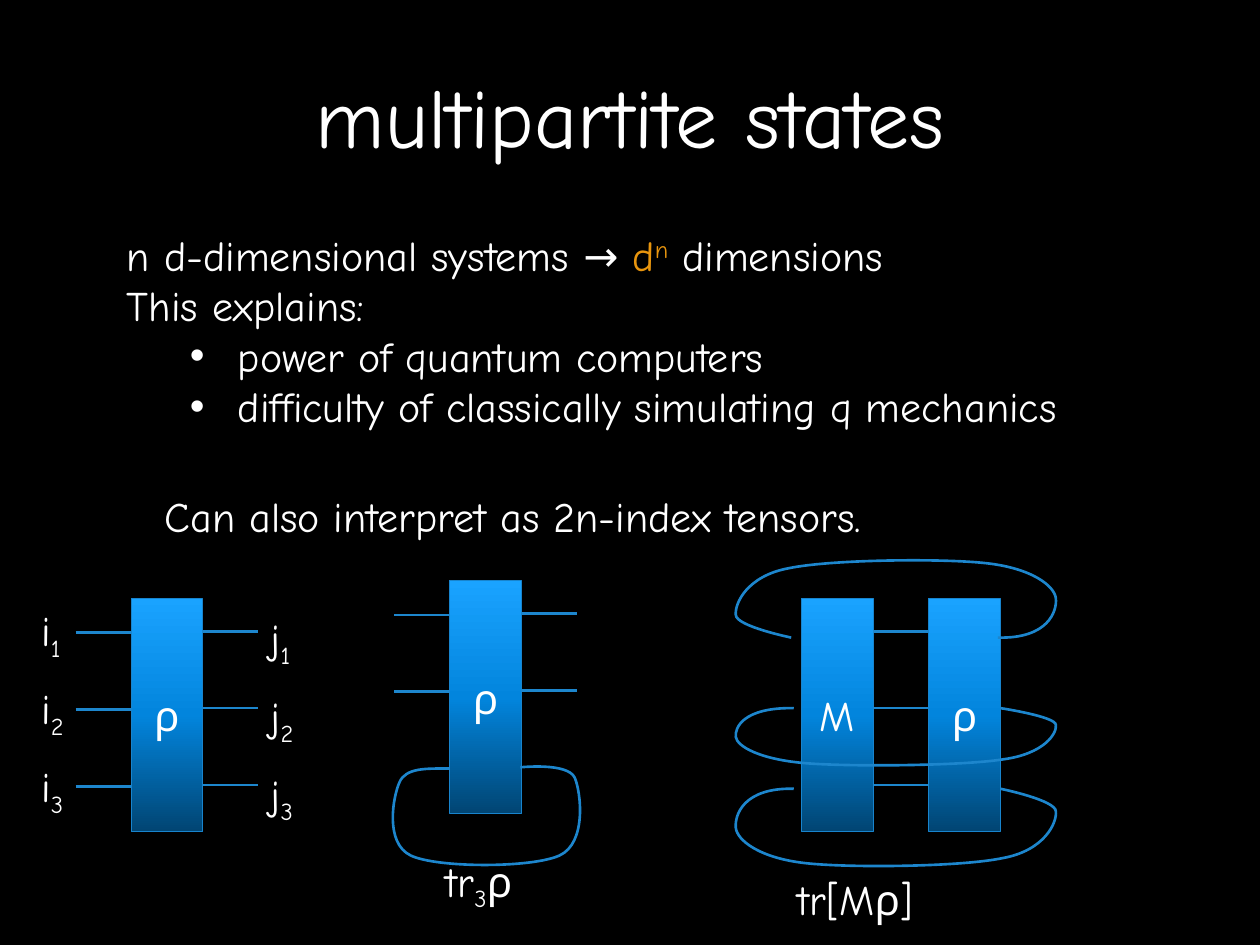
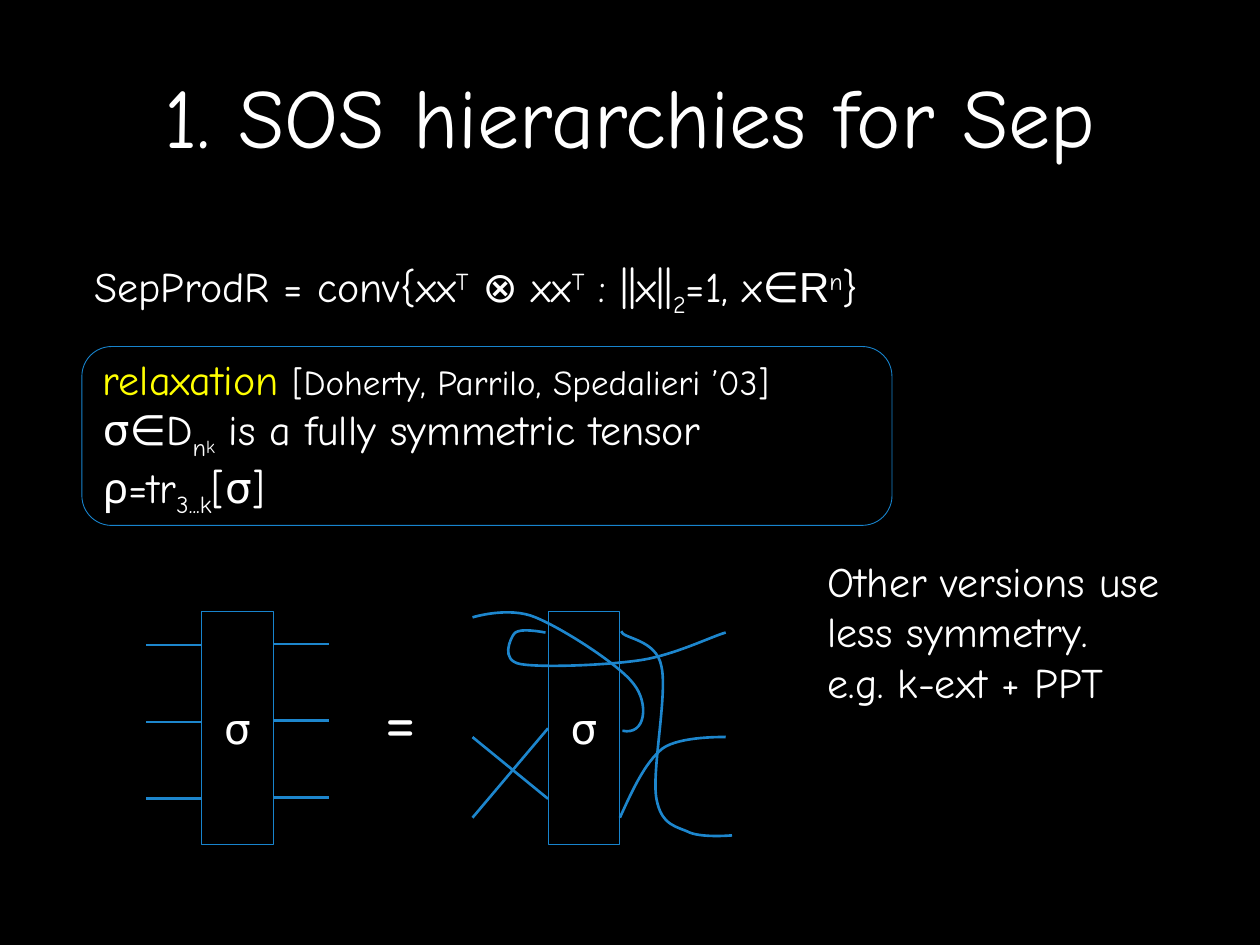
import copy
from dataclasses import dataclass

import pptx
import pptx.dml.color
import pptx.enum.shapes
import pptx.enum.text
import pptx.oxml.ns
import pptx.util
from lxml import etree
from pptx.util import Inches

ALIGN = pptx.enum.text.PP_ALIGN
ANCHOR = pptx.enum.text.MSO_ANCHOR
SHAPE = pptx.enum.shapes.MSO_SHAPE
qn = pptx.oxml.ns.qn


@dataclass(frozen=True)
class Theme:
    """Colours, fonts and type sizes of the deck."""
    background: str = "000000"
    text: str = "FFFFFF"
    accent: str = "E8950E"
    keyword: str = "FFFF00"
    outline: str = "1884CD"
    wire: str = "1D86CD"
    gradient: tuple = ((0, "014573"), (0.5, "0285DD"), (1, "1AA3FF"))
    font: str = "Comic Neue"
    plain_font: str = "Arial"
    title_size: int = 48
    equals_size: int = 40
    body_size: int = 24
    citation_size: int = 20
    nested_size: int = 18
    outline_width: float = 0.5
    wire_width: float = 1.5


THEME = Theme()
BLOCK_WIDTH, BLOCK_HEIGHT = 0.57, 1.85
WIRE_LENGTH, WIRE_STEP = 0.44, 0.61
LEFT_WIRE_DROP, RIGHT_WIRE_DROP = 0.27, 0.26


@dataclass(frozen=True)
class Span:
    """A stretch of text that departs from its paragraph's font."""
    text: str
    baseline: int = 0
    color: str = ""
    size: int = 0
    font: str = ""


def sub(text, **style):
    """Return a subscript span."""
    return Span(text, -25, **style)


def sup(text, **style):
    """Return a superscript span."""
    return Span(text, 30, **style)


def rgb(value):
    """Return a colour from its hex digits."""
    return pptx.dml.color.RGBColor.from_string(value)


def add_bullet(para):
    """Give a paragraph a hanging bullet."""
    properties = para._p.get_or_add_pPr()
    properties.set("marL", str(Inches(0.88)))
    properties.set("indent", str(Inches(-0.38)))
    etree.SubElement(properties, qn("a:buFont")).set("typeface", THEME.plain_font)
    etree.SubElement(properties, qn("a:buChar")).set("char", "•")


def add_span(para, part):
    """Append a plain string or a styled span to a paragraph."""
    part = part if isinstance(part, Span) else Span(part)
    span = para.add_run()
    span.text = part.text
    if part.color:
        span.font.color.rgb = rgb(part.color)
    if part.size:
        span.font.size = pptx.util.Pt(part.size)
    if part.font:
        span.font.name = part.font
    if part.baseline:
        span._r.get_or_add_rPr().set("baseline", str(part.baseline * 1000))


def write(frame, lines, size=THEME.body_size, align=ALIGN.LEFT, bullets=()):
    """Fill a text frame with lines, each a list of spans."""
    for index, parts in enumerate(lines):
        para = frame.add_paragraph() if index else frame.paragraphs[0]
        para.alignment = align
        if index in bullets:
            add_bullet(para)
        para.font.name = THEME.font
        para.font.size = pptx.util.Pt(size)
        para.font.color.rgb = rgb(THEME.text)
        for part in parts:
            add_span(para, part)


def add_text(page, left, top, width, height, lines, **style):
    """Add a text box that keeps its lines unbroken."""
    box = page.shapes.add_textbox(*map(Inches, (left, top, width, height)))
    box.text_frame.word_wrap = False
    box.text_frame.auto_size = pptx.enum.text.MSO_AUTO_SIZE.SHAPE_TO_FIT_TEXT
    write(box.text_frame, lines, **style)


def add_page(deck, title):
    """Add a blank page with the shared title style."""
    page = deck.slides.add_slide(deck.slide_layouts[6])
    box = page.shapes.add_textbox(*map(Inches, (0.75, 0.13, 8.5, 1.56)))
    box.text_frame.word_wrap = True
    box.text_frame.vertical_anchor = ANCHOR.MIDDLE
    write(box.text_frame, [[title]], THEME.title_size, ALIGN.CENTER)
    return page


def add_panel(page, kind, left, top, width, height, lines, align):
    """Add an unfilled, thinly outlined shape with text."""
    panel = page.shapes.add_shape(kind, *map(Inches, (left, top, width, height)))
    panel.shadow.inherit = False
    panel.fill.background()
    panel.line.color.rgb = rgb(THEME.outline)
    panel.line.width = pptx.util.Pt(THEME.outline_width)
    panel.text_frame.word_wrap = True
    panel.text_frame.vertical_anchor = ANCHOR.MIDDLE
    write(panel.text_frame, lines, align=align)
    return panel


def add_block(page, left, top, name, filled=True):
    """Add a tensor block, with a vertical gradient if filled."""
    block = add_panel(page, SHAPE.RECTANGLE, left, top, BLOCK_WIDTH, BLOCK_HEIGHT,
                      [[name]], ALIGN.CENTER)
    if filled:
        block.fill.gradient()
        block.fill.gradient_angle = 90
        stops = block.element.find(".//" + qn("a:gsLst"))
        stops.append(copy.deepcopy(stops[0]))
        for stop, (position, color) in zip(block.fill.gradient_stops, THEME.gradient):
            stop.position = position
            stop.color.rgb = rgb(color)


def style_wire(line):
    """Apply the shared wire stroke."""
    line.color.rgb = rgb(THEME.wire)
    line.width = pptx.util.Pt(THEME.wire_width)


def add_wire(page, start, end):
    """Add a straight wire."""
    wire = page.shapes.add_connector(pptx.enum.shapes.MSO_CONNECTOR.STRAIGHT,
                                     *map(Inches, (*start, *end)))
    style_wire(wire.line)
    etree.SubElement(wire.element.spPr, qn("a:effectLst"))


def add_wires(page, left, first_top, count):
    """Add evenly spaced horizontal wires."""
    for index in range(count):
        top = first_top + index * WIRE_STEP
        add_wire(page, (left, top), (left + WIRE_LENGTH, top))


def add_wired_block(page, left, top, name, count=3, filled=True):
    """Add a block with wires on both sides."""
    add_block(page, left, top, name, filled)
    add_wires(page, left - WIRE_LENGTH, top + LEFT_WIRE_DROP, count)
    add_wires(page, left + BLOCK_WIDTH, top + RIGHT_WIRE_DROP, count)


def add_curve(page, points):
    """Add a wire of cubic curves: a start, then two handles and an end each."""
    places = [(Inches(x), Inches(y)) for x, y in points]
    anchors = places[::3]
    builder = page.shapes.build_freeform(*anchors[0], scale=1.0)
    builder.add_line_segments(anchors[1:], close=False)
    curve = builder.convert_to_shape()
    curve.shadow.inherit = False
    curve.fill.background()
    style_wire(curve.line)
    for index, segment in enumerate(curve.element.findall(".//" + qn("a:lnTo"))):
        bend = etree.Element(qn("a:cubicBezTo"))
        for x, y in places[3 * index + 1:3 * index + 4]:
            point = etree.SubElement(bend, qn("a:pt"))
            point.set("x", str(x - curve.left))
            point.set("y", str(y - curve.top))
        segment.getparent().replace(segment, bend)


def add_index_labels(page, letter, left, top, width):
    """Add a column of three numbered index labels."""
    for index in range(3):
        add_text(page, left, top + index * 0.62, width, 0.5,
                 [[letter, sub(str(index + 1))]])


def build_multipartite(deck):
    """Build the page on multipartite states and traces."""
    page = add_page(deck, "multipartite states")
    add_text(page, 0.91, 1.77, 8.06, 1.72, [
        ["n d-dimensional systems → ", Span("d", color=THEME.accent),
         sup("n", color=THEME.accent), " dimensions"],
        ["This explains:"],
        ["power of quantum computers"],
        ["difficulty of classically simulating q mechanics"],
    ], bullets=(2, 3))
    add_text(page, 1.21, 3.84, 6.16, 0.5, [["Can also interpret as 2n-index tensors."]])

    add_wired_block(page, 1.04, 4.75, "ρ")
    add_index_labels(page, "i", 0.23, 4.75, 0.41)
    add_index_labels(page, "j", 2.05, 4.81, 0.46)

    add_wired_block(page, 3.57, 4.61, "ρ", count=2)
    add_curve(page, [
        (3.57, 6.1), (3.39, 6.1), (3.22, 6.09), (3.17, 6.21), (3.12, 6.32),
        (3.05, 6.69), (3.26, 6.79), (3.47, 6.89), (4.22, 6.89), (4.44, 6.79),
        (4.66, 6.69), (4.61, 6.28), (4.56, 6.17), (4.5, 6.05), (4.13, 6.09), (4.13, 6.09)])
    add_text(page, 3.44, 6.74, 0.97, 0.5, [["tr", sub("3"), "ρ"]])

    add_block(page, 6.36, 4.75, "M")
    add_wires(page, 6.36 + BLOCK_WIDTH, 4.75 + RIGHT_WIRE_DROP, 3)
    add_block(page, 7.37, 4.75, "ρ")
    loop = [
        (6.3, 6.26), (5.9, 6.25), (5.83, 6.47), (5.84, 6.57), (5.85, 6.67),
        (6.03, 6.81), (6.39, 6.85), (6.74, 6.89), (7.63, 6.88), (7.96, 6.81),
        (8.29, 6.75), (8.39, 6.53), (8.38, 6.44), (8.38, 6.35), (7.94, 6.26), (7.94, 6.26)]
    add_curve(page, loop)
    add_curve(page, [(14.22 - x, 11.32 - y) for x, y in loop])
    add_curve(page, [(x, 5.62 + 0.74 * (y - 6.26)) for x, y in loop])
    add_text(page, 6.23, 6.88, 1.34, 0.5, [["tr[Mρ]"]])


def build_hierarchies(deck):
    """Build the page on hierarchies for separable states."""
    page = add_page(deck, "1. SOS hierarchies for Sep")
    add_text(page, 0.65, 2.02, 6.79, 0.5, [[
        "SepProdR = conv{xx", sup("T"), " ⊗ xx", sup("T"), " : ||x||", sub("2"),
        "=1, x∈", Span("R", font=THEME.plain_font), sup("n"), "}"]])
    add_panel(page, SHAPE.ROUNDED_RECTANGLE, 0.65, 2.75, 6.43, 1.42, [
        [Span("relaxation ", color=THEME.keyword),
         Span("[Doherty, Parrilo, Spedalieri ’03]", size=THEME.citation_size)],
        ["σ∈D", sub("n"), sub("k", size=THEME.nested_size), " is a fully symmetric tensor"],
        ["ρ=tr", sub("3...k"), "[σ]"],
    ], ALIGN.LEFT)

    add_wired_block(page, 1.6, 4.85, "σ", filled=False)
    add_text(page, 2.95, 5.31, 0.48, 0.77, [["="]], size=THEME.equals_size)
    add_block(page, 4.35, 4.85, "σ", filled=False)
    add_wire(page, (3.75, 6.49), (4.35, 5.78))
    add_wire(page, (3.75, 5.85), (4.35, 6.34))
    permuted_wires = [
        [(4.33, 5.02), (4.22, 5), (4.11, 4.99), (4.08, 5.03), (4.05, 5.07),
         (3.97, 5.24), (4.13, 5.27), (4.3, 5.3), (4.81, 5.28), (5.08, 5.24),
         (5.35, 5.2), (5.65, 5.05), (5.76, 5.02)],
        [(4.94, 5.8), (5.13, 5.84), (5.15, 5.58), (5.03, 5.43), (4.92, 5.28),
         (4.47, 4.99), (4.25, 4.9), (4.04, 4.81), (3.75, 4.9), (3.75, 4.9)],
        [(4.93, 5.01), (4.94, 5.07), (5.21, 5.07), (5.25, 5.29), (5.3, 5.51),
         (5.17, 6.12), (5.21, 6.34), (5.25, 6.56), (5.38, 6.56), (5.48, 6.61),
         (5.59, 6.65), (5.81, 6.63), (5.81, 6.63)],
        [(4.92, 6.49), (5.02, 6.27), (5.12, 6.05), (5.26, 5.94), (5.4, 5.84),
         (5.76, 5.85), (5.76, 5.85)],
    ]
    for points in permuted_wires:
        add_curve(page, points)
    add_text(page, 6.47, 4.36, 3.09, 1.31, [
        ["Other versions use"], ["less symmetry."], ["e.g. k-ext + PPT"]])


def main():
    """Build and save the deck."""
    deck = pptx.Presentation()
    deck.slide_width, deck.slide_height = Inches(10), Inches(7.5)
    backdrop = deck.slide_master.background.fill
    backdrop.solid()
    backdrop.fore_color.rgb = rgb(THEME.background)
    build_multipartite(deck)
    build_hierarchies(deck)
    deck.save("out.pptx")


if __name__ == "__main__":
    main()
